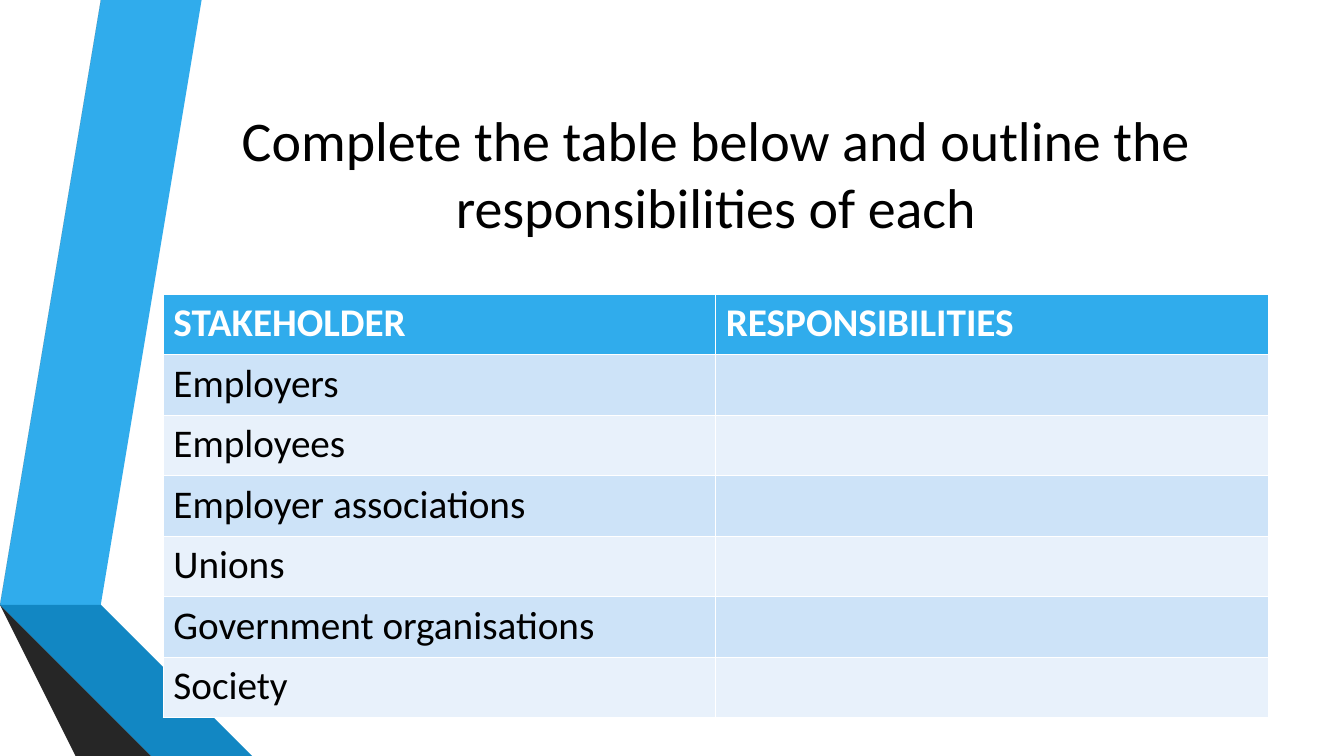
"""Build a slide with a folded ribbon, a title and a stakeholder table."""
from pptx import Presentation
from pptx import util as u
from pptx.dml.color import RGBColor
from pptx.enum import text

WIDTH, HEIGHT = 13.33, 7.5
LEFT, CONTENT_WIDTH = 1.62, 10.96
TITLE_TOP, TITLE_HEIGHT = HEIGHT * 0.1, 1.92
TABLE_TOP, ROW_HEIGHT = 2.92, 0.6

FONT = "Calibri"
BLACK = RGBColor(0x00, 0x00, 0x00)
WHITE = RGBColor(0xFF, 0xFF, 0xFF)
BLUE = RGBColor(0x30, 0xAC, 0xEC)
BLUE_FOLD = RGBColor(0x12, 0x87, 0xC3)
BLUE_EDGE = RGBColor(0x0C, 0x5A, 0x82)
GREY = RGBColor(0x59, 0x59, 0x59)
GREY_FOLD = RGBColor(0x40, 0x40, 0x40)
GREY_EDGE = RGBColor(0x26, 0x26, 0x26)
BAND_DARK = RGBColor(0xCD, 0xE3, 0xF8)
BAND_LIGHT = RGBColor(0xE8, 0xF1, 0xFB)

RIBBONS = [
    (BLUE, [(0.5, 5.78), (0.77, 5.83), (1.73, 0), (1.45, 0)]),
    (GREY, [(1.39, 0), (1.11, 0), (0.16, 5.73), (0.44, 5.77)]),
    (GREY_EDGE, [(0.16, 5.73), (1.45, HEIGHT), (1.51, HEIGHT)]),
    (BLUE_EDGE, [(0.5, 5.79), (2.08, HEIGHT), (2.14, HEIGHT)]),
    (BLUE_FOLD, [(0.5, 5.79), (2.14, HEIGHT), (2.83, HEIGHT), (0.77, 5.83), (0.5, 5.78)]),
    (GREY_FOLD, [(2.02, HEIGHT), (0.48, 5.83), (0.44, 5.77), (0.16, 5.73), (1.51, HEIGHT)]),
]
HEADINGS = ("STAKEHOLDER", "RESPONSIBILITIES")
STAKEHOLDERS = (
    "Employers",
    "Employees",
    "Employer associations",
    "Unions",
    "Government organisations",
    "Society",
)


def write_text(frame, words, size=28, color=BLACK, bold=False, align=text.PP_ALIGN.LEFT):
    """Write one formatted paragraph into a text frame."""
    paragraph = frame.paragraphs[0]
    paragraph.text = words
    paragraph.alignment = align
    for font in [paragraph.font] + [run.font for run in paragraph.runs]:
        font.name, font.size, font.bold = FONT, u.Pt(size), bold
        font.color.rgb = color


def add_ribbon(slide, color, points):
    """Draw one flat panel of the ribbon from points in inches."""
    builder = slide.shapes.build_freeform(*points[0], scale=u.Inches(1))
    builder.add_line_segments(points[1:], close=True)
    shape = builder.convert_to_shape()
    shape.shadow.inherit = False
    shape.fill.solid()
    shape.fill.fore_color.rgb = color
    shape.line.fill.background()


def set_title(slide, words):
    """Place and format the title placeholder."""
    title = slide.shapes.title
    title.left, title.top = u.Inches(LEFT), u.Inches(TITLE_TOP)
    title.width, title.height = u.Inches(CONTENT_WIDTH), u.Inches(TITLE_HEIGHT)
    frame = title.text_frame
    frame.word_wrap = True
    frame.auto_size = text.MSO_AUTO_SIZE.NONE
    frame.vertical_anchor = text.MSO_ANCHOR.MIDDLE
    write_text(frame, words, size=40, align=text.PP_ALIGN.CENTER)


def add_table(slide, rows):
    """Add a table with a blue header and alternating bands."""
    table = slide.shapes.add_table(
        len(rows), len(rows[0]), u.Inches(LEFT), u.Inches(TABLE_TOP),
        u.Inches(CONTENT_WIDTH), u.Inches(ROW_HEIGHT * len(rows)),
    ).table
    for row_index, row in enumerate(rows):
        header = row_index == 0
        band = BAND_DARK if row_index % 2 else BAND_LIGHT
        for column_index, words in enumerate(row):
            cell = table.cell(row_index, column_index)
            cell.fill.solid()
            cell.fill.fore_color.rgb = BLUE if header else band
            write_text(cell.text_frame, words, color=WHITE if header else BLACK, bold=header)


def main():
    """Build and save the slide."""
    presentation = Presentation()
    presentation.slide_width = u.Inches(WIDTH)
    presentation.slide_height = u.Inches(HEIGHT)
    slide = presentation.slides.add_slide(presentation.slide_layouts.get_by_name("Title Only"))
    for color, points in RIBBONS:
        add_ribbon(slide, color, points)
    set_title(slide, "Complete the table below and outline the responsibilities of each")
    add_table(slide, [HEADINGS] + [(name, "") for name in STAKEHOLDERS])
    presentation.save("out.pptx")


if __name__ == "__main__":
    main()
